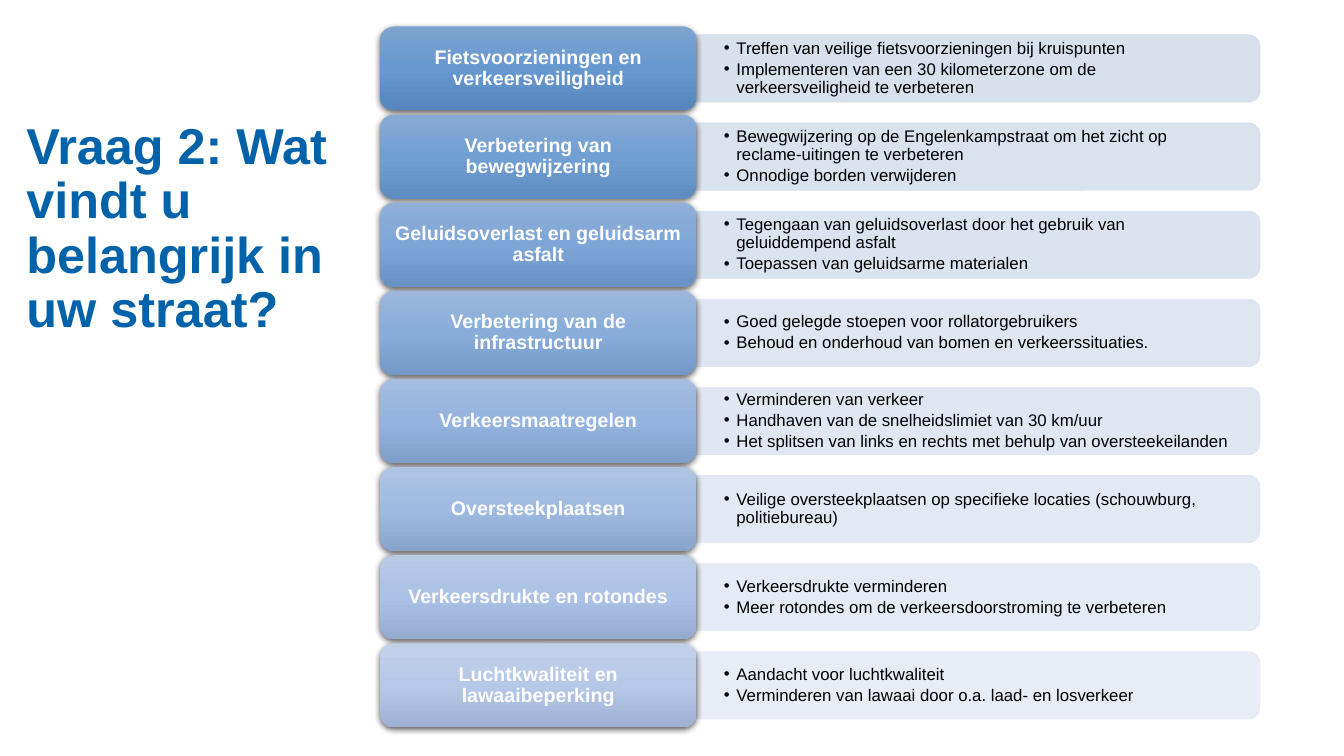
from copy import deepcopy

from lxml import etree
from pptx import Presentation
from pptx.dml.color import RGBColor
from pptx.enum import shapes, text
from pptx.oxml import ns
from pptx.util import Pt

QUESTION_BLUE = RGBColor(0x00, 0x62, 0xA8)
WHITE = RGBColor(0xFF, 0xFF, 0xFF)
BLACK = RGBColor(0x00, 0x00, 0x00)
# First-row and last-row tints; rows in between are blended
BAND_TINTS = (RGBColor(0xD4, 0xDD, 0xEC), RGBColor(0xE6, 0xEB, 0xF5))
THEME_TINTS = (
    (RGBColor(0x7E, 0xA3, 0xD1), RGBColor(0xC2, 0xD1, 0xEA)),
    (RGBColor(0x66, 0x98, 0xD0), RGBColor(0xB6, 0xC8, 0xE8)),
    (RGBColor(0x55, 0x86, 0xBE), RGBColor(0x9E, 0xB1, 0xD2)),
)

ROW_TOP, ROW_PITCH = 18.9, 62.95
THEME_LEFT, THEME_WIDTH, THEME_HEIGHT = 271.5, 226, 60
BAND_LEFT, BAND_WIDTH, BAND_HEIGHT = 497.5, 402.5, 48

ANSWERS = [
    ("Fietsvoorzieningen en verkeersveiligheid", [
        "Treffen van veilige fietsvoorzieningen bij kruispunten",
        "Implementeren van een 30 kilometerzone om de verkeersveiligheid te verbeteren"]),
    ("Verbetering van bewegwijzering", [
        "Bewegwijzering op de Engelenkampstraat om het zicht op reclame-uitingen te verbeteren",
        "Onnodige borden verwijderen"]),
    ("Geluidsoverlast en geluidsarm asfalt", [
        "Tegengaan van geluidsoverlast door het gebruik van geluiddempend asfalt",
        "Toepassen van geluidsarme materialen"]),
    ("Verbetering van de infrastructuur", [
        "Goed gelegde stoepen voor rollatorgebruikers",
        "Behoud en onderhoud van bomen en verkeerssituaties."]),
    ("Verkeersmaatregelen", [
        "Verminderen van verkeer",
        "Handhaven van de snelheidslimiet van 30 km/uur",
        "Het splitsen van links en rechts met behulp van oversteekeilanden"]),
    ("Oversteekplaatsen", [
        "Veilige oversteekplaatsen op specifieke locaties (schouwburg, politiebureau)"]),
    ("Verkeersdrukte en rotondes", [
        "Verkeersdrukte verminderen",
        "Meer rotondes om de verkeersdoorstroming te verbeteren"]),
    ("Luchtkwaliteit en lawaaibeperking", [
        "Aandacht voor luchtkwaliteit",
        "Verminderen van lawaai door o.a. laad- en losverkeer"]),
]


def blend(tints, share):
    return RGBColor(*(round(a + (b - a) * share) for a, b in zip(*tints)))


def style_text(frame, size, color, bold, anchor, align, inset_x, inset_y):
    frame.word_wrap = True
    frame.auto_size = text.MSO_AUTO_SIZE.NONE
    frame.vertical_anchor = anchor
    frame.margin_left = frame.margin_right = Pt(inset_x)
    frame.margin_top = frame.margin_bottom = Pt(inset_y)
    for paragraph in frame.paragraphs:
        paragraph.alignment = align
        paragraph.line_spacing = 0.9
        paragraph.space_before = Pt(0)
        for run in paragraph.runs:
            run.font.name = "Arial"
            run.font.size = Pt(size)
            run.font.bold = bold
            run.font.color.rgb = color


deck = Presentation()
deck.slide_width, deck.slide_height = Pt(960), Pt(540)
slide = deck.slides.add_slide(deck.slide_layouts[5])

# Question
question = slide.shapes.title
question.left, question.top = Pt(18.9), Pt(86.4)
question.width, question.height = Pt(260), Pt(222)
question.text_frame.text = "Vraag 2: Wat vindt u belangrijk in uw straat?"
style_text(question.text_frame, 36, QUESTION_BLUE, True,
           text.MSO_ANCHOR.TOP, text.PP_ALIGN.LEFT, 0, 0)

for row, (theme_name, wishes) in enumerate(ANSWERS):
    share = row / (len(ANSWERS) - 1)
    top = ROW_TOP + row * ROW_PITCH
    middle = top + THEME_HEIGHT / 2

    # Band: an upright shape turned so its round corners face right
    band = slide.shapes.add_shape(
        shapes.MSO_SHAPE.ROUND_2_SAME_RECTANGLE,
        Pt(BAND_LEFT + (BAND_WIDTH - BAND_HEIGHT) / 2), Pt(middle - BAND_WIDTH / 2),
        Pt(BAND_HEIGHT), Pt(BAND_WIDTH))
    band.rotation = 90
    band.shadow.inherit = False
    band.fill.solid()
    band.fill.fore_color.rgb = band.line.color.rgb = blend(BAND_TINTS, share)
    band.line.width = Pt(0.5)
    for tint in list(band.element.spPr.iter(ns.qn("a:srgbClr"))):
        etree.SubElement(tint, ns.qn("a:alpha"), val="90000")

    # Wishes on the band
    wish_list = slide.shapes.add_textbox(
        Pt(BAND_LEFT), Pt(middle - 21.6), Pt(400), Pt(43.2)).text_frame
    wish_list.text = "\n".join(wishes)
    for wish in wish_list.paragraphs:
        props = wish._p.get_or_add_pPr()
        props.set("marL", str(Pt(9)))
        props.set("indent", str(-Pt(9)))
        etree.SubElement(props, ns.qn("a:buFont"), typeface="Arial")
        etree.SubElement(props, ns.qn("a:buChar"), char="•")
        wish.space_after = Pt(2)
    style_text(wish_list, 12, BLACK, False,
               text.MSO_ANCHOR.MIDDLE, text.PP_ALIGN.LEFT, 19.5, 9.75)

    # Theme box with a three-step gradient and a soft shadow
    theme = slide.shapes.add_shape(
        shapes.MSO_SHAPE.ROUNDED_RECTANGLE,
        Pt(THEME_LEFT), Pt(top), Pt(THEME_WIDTH), Pt(THEME_HEIGHT))
    theme.line.fill.background()
    theme.fill.gradient()
    theme.fill.gradient_angle = 270
    stop_list = theme.element.spPr.find(".//" + ns.qn("a:gsLst"))
    stop_list.append(deepcopy(stop_list[0]))
    for step, stop in enumerate(theme.fill.gradient_stops):
        stop.position = step / 2
        stop.color.rgb = blend(THEME_TINTS[step], share)
    theme.shadow.inherit = False
    effects = theme.element.spPr.find(ns.qn("a:effectLst"))
    shadow = etree.SubElement(effects, ns.qn("a:outerShdw"), blurRad=str(Pt(4.5)),
                              dist=str(Pt(1.5)), dir="5400000", rotWithShape="0")
    shade = etree.SubElement(shadow, ns.qn("a:srgbClr"), val=str(BLACK))
    etree.SubElement(shade, ns.qn("a:alpha"), val="63000")
    theme.text_frame.text = theme_name
    style_text(theme.text_frame, 14, WHITE, True,
               text.MSO_ANCHOR.MIDDLE, text.PP_ALIGN.CENTER, 7.2, 5)

deck.save("out.pptx")
